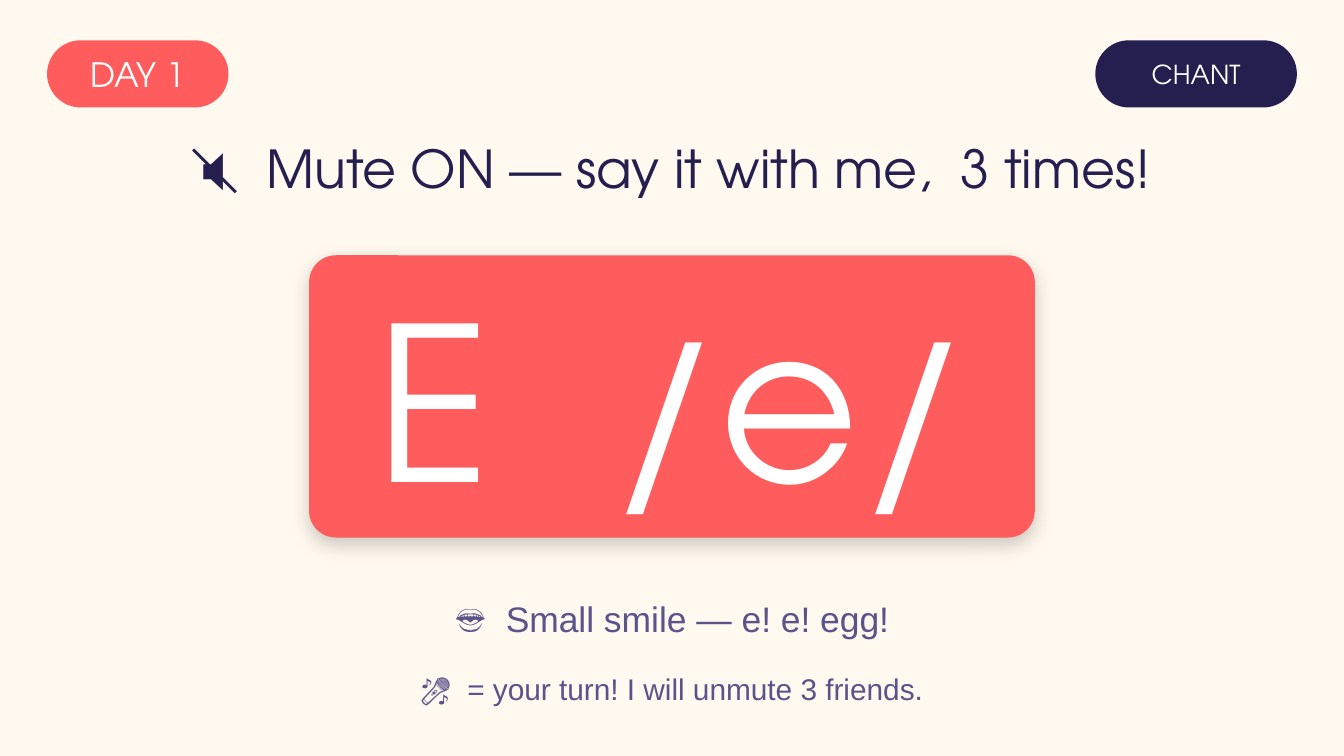
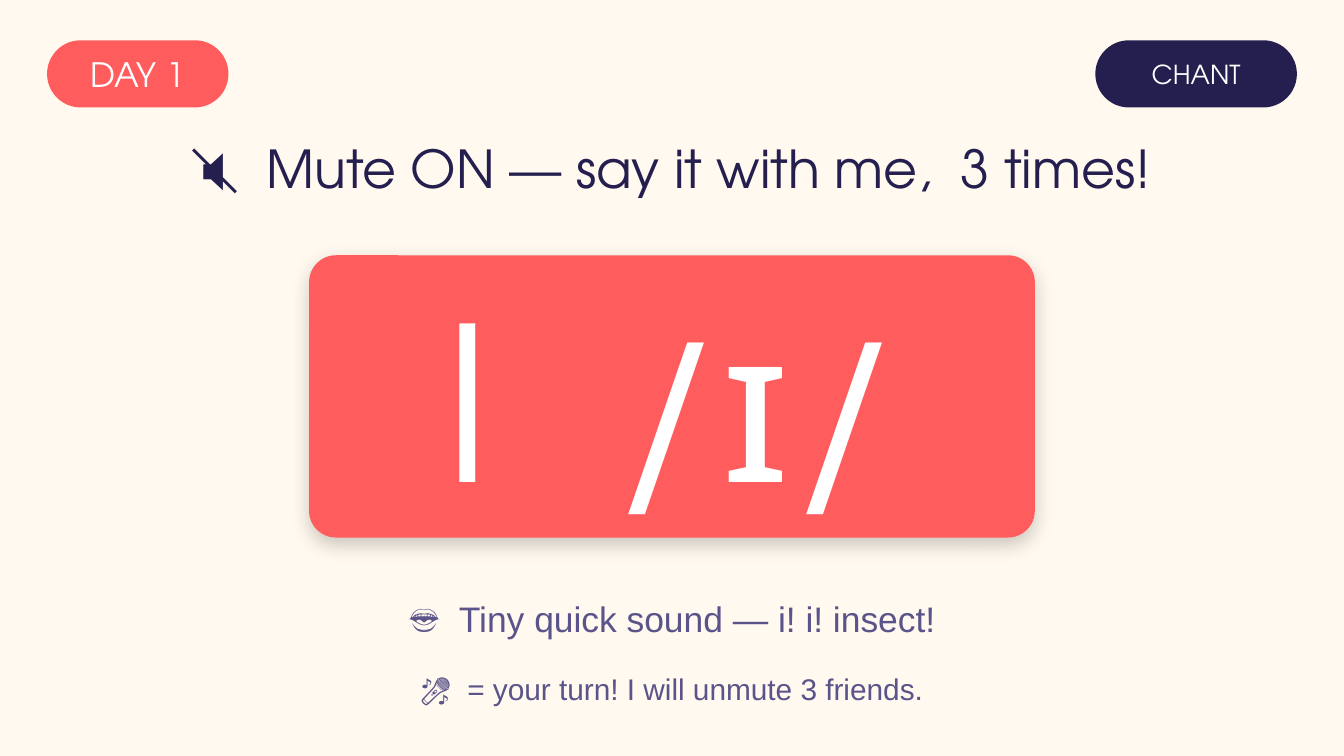
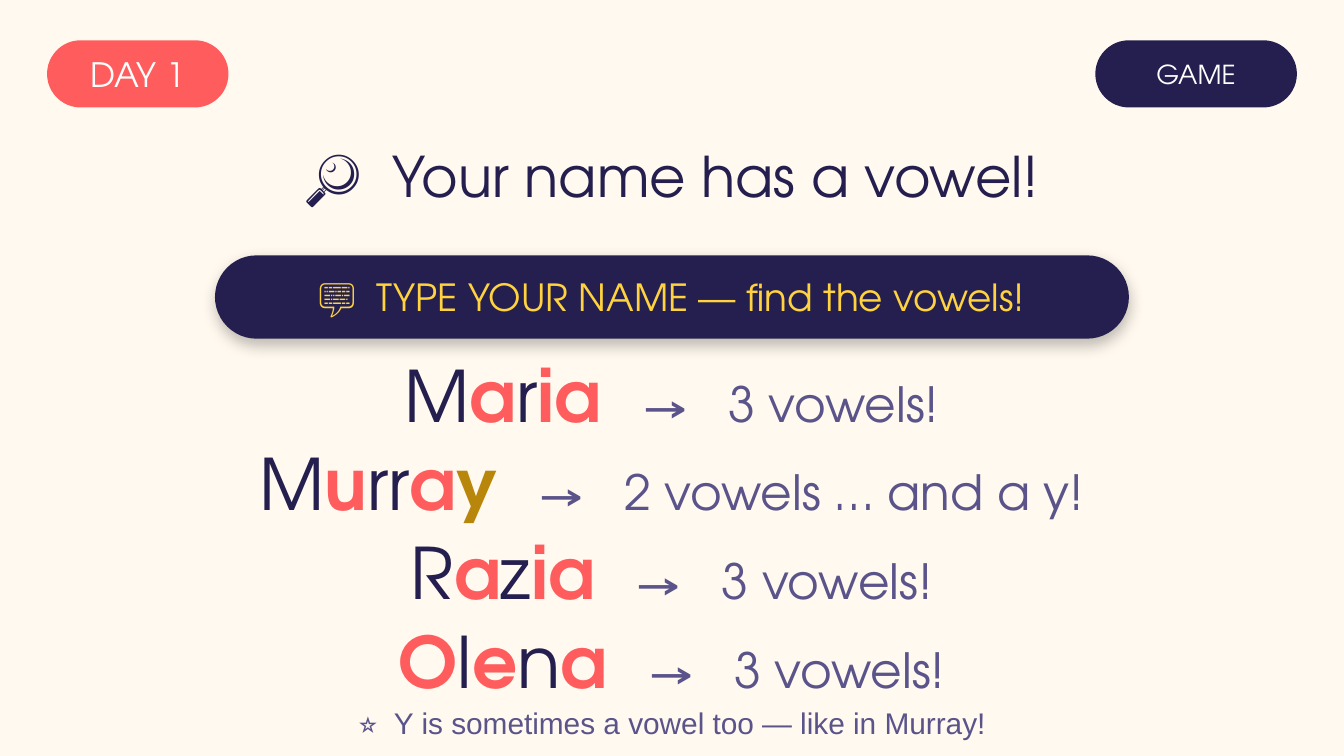
import itertools
from dataclasses import dataclass

import pptx
import pptx.dml.color
import pptx.enum.shapes
import pptx.enum.text
import pptx.oxml
import pptx.oxml.ns
import pptx.util

Inches = pptx.util.Inches
Pt = pptx.util.Pt


@dataclass(frozen=True)
class Theme:
    cream: str = "FFF9EF"
    coral: str = "FF5D5D"
    navy: str = "241F4E"
    violet: str = "5A548A"
    yellow: str = "FFD23F"
    gold: str = "B8860B"
    white: str = "FFFFFF"
    display: str = "TeX Gyre Adventor"
    plain: str = "Arial"
    day_size: int = 18
    activity_size: int = 14
    chant_title_size: int = 28
    game_title_size: int = 30
    sound_size: int = 115
    tip_size: int = 19
    note_size: int = 16
    prompt_size: int = 20
    name_size: int = 38
    count_size: int = 26


THEME = Theme()
SLIDE_WIDTH = 10
SLIDE_HEIGHT = SLIDE_WIDTH * 9 / 16
DAY = "DAY 1"

CHANT_TITLE = "🔇  Mute ON — say it with me,  3 times!"
CHANT_TURN = "🎤  = your turn! I will unmute 3 friends."
CHANTS = [
    ("E  /e/", "👄  Small smile — e! e! egg!"),
    ("I  /ɪ/", "👄  Tiny quick sound — i! i! insect!"),
]

GAME_TITLE = "🔎  Your name has a vowel!"
GAME_PROMPT = "💬  TYPE YOUR NAME — find the vowels!"
GAME_NAMES = [
    ("Maria", "3 vowels!"),
    ("Murray", "2 vowels … and a y!"),
    ("Razia", "3 vowels!"),
    ("Olena", "3 vowels!"),
]
GAME_NOTE = "⭐  Y is sometimes a vowel too — like in Murray!"
NAMES_TOP, NAME_HEIGHT, NAME_STEP = 2.62, 0.62, 0.66


def rgb(color):
    return pptx.dml.color.RGBColor.from_string(color)


def write(shape, runs):
    """Fill a shape with one centred line of (text, size, color, font, bold) runs."""
    frame = shape.text_frame
    frame.word_wrap = True
    frame.auto_size = pptx.enum.text.MSO_AUTO_SIZE.NONE
    frame.vertical_anchor = pptx.enum.text.MSO_ANCHOR.MIDDLE
    line = frame.paragraphs[0]
    line.alignment = pptx.enum.text.PP_ALIGN.CENTER
    for text, size, color, font, bold in runs:
        run = line.add_run()
        run.text = text
        run.font.size = Pt(size)
        run.font.color.rgb = rgb(color)
        run.font.name = font
        run.font.bold = bold


def add_line(slide, top, height, runs):
    """Add a line of text centred across the whole slide."""
    box = slide.shapes.add_textbox(0, Inches(top), Inches(SLIDE_WIDTH), Inches(height))
    write(box, runs)


def add_caption(slide, top, height, text, size):
    add_line(slide, top, height, [(text, size, THEME.violet, THEME.plain, False)])


def add_panel(slide, box, fill, text, size, color=THEME.white, corner=0.5, shadow=None):
    """Add a rounded panel; shadow is (opacity %, blur pt, distance pt)."""
    panel = slide.shapes.add_shape(
        pptx.enum.shapes.MSO_SHAPE.ROUNDED_RECTANGLE, *map(Inches, box))
    panel.adjustments[0] = corner
    panel.fill.solid()
    panel.fill.fore_color.rgb = rgb(fill)
    panel.line.fill.background()
    panel.shadow.inherit = False
    if shadow:
        add_shadow(panel, *shadow)
    frame = panel.text_frame
    frame.margin_left = frame.margin_top = frame.margin_right = frame.margin_bottom = 0
    write(panel, [(text, size, color, THEME.display, False)])


def add_shadow(panel, opacity, blur, distance):
    effects = panel._element.spPr.find(pptx.oxml.ns.qn("a:effectLst"))
    effects.append(pptx.oxml.parse_xml(
        f'<a:outerShdw {pptx.oxml.ns.nsdecls("a")} blurRad="{Pt(blur)}" '
        f'dist="{Pt(distance)}" dir="5400000" algn="ctr" rotWithShape="0">'
        f'<a:srgbClr val="000000"><a:alpha val="{opacity * 1000}"/></a:srgbClr>'
        '</a:outerShdw>'))


def add_day_slide(deck, activity, title, title_size, title_height):
    """Add a slide with the title and the two pills that every slide carries."""
    slide = deck.slides.add_slide(deck.slide_layouts.get_by_name("Title Only"))
    heading = slide.shapes.title
    heading.left, heading.top = 0, Inches(0.95)
    heading.width, heading.height = Inches(SLIDE_WIDTH), Inches(title_height)
    write(heading, [(title, title_size, THEME.navy, THEME.display, False)])
    add_panel(slide, (0.35, 0.3, 1.35, 0.5), THEME.coral, DAY, THEME.day_size)
    add_panel(slide, (8.15, 0.3, 1.5, 0.5), THEME.navy, activity, THEME.activity_size)
    return slide


def add_chant(deck, sound, tip):
    slide = add_day_slide(deck, "CHANT", CHANT_TITLE, THEME.chant_title_size, 0.6)
    add_panel(slide, (2.3, 1.9, 5.4, 2.1), THEME.coral, sound, THEME.sound_size,
              corner=0.095, shadow=(20, 10, 4))
    add_caption(slide, 4.35, 0.5, tip, THEME.tip_size)
    add_caption(slide, 4.9, 0.45, CHANT_TURN, THEME.note_size)


def letter_color(letter):
    if letter.lower() in "aeiou":
        return THEME.coral
    return THEME.gold if letter == "y" else THEME.navy


def name_runs(name, count):
    """Split a name into consonants and bold vowels, then add its vowel count."""
    runs = [("".join(letters), THEME.name_size, color, THEME.display, color != THEME.navy)
            for color, letters in itertools.groupby(name, letter_color)]
    return runs + [(f"   →   {count}", THEME.count_size, THEME.violet, THEME.display, False)]


def add_game(deck):
    slide = add_day_slide(deck, "GAME", GAME_TITLE, THEME.game_title_size, 0.7)
    add_panel(slide, (1.6, 1.9, 6.8, 0.62), THEME.navy, GAME_PROMPT, THEME.prompt_size,
              color=THEME.yellow, shadow=(25, 8, 3))
    for row, (name, count) in enumerate(GAME_NAMES):
        add_line(slide, NAMES_TOP + row * NAME_STEP, NAME_HEIGHT, name_runs(name, count))
    add_caption(slide, 5.18, 0.4, GAME_NOTE, THEME.note_size)


def main():
    deck = pptx.Presentation()
    deck.slide_width, deck.slide_height = Inches(SLIDE_WIDTH), Inches(SLIDE_HEIGHT)
    backdrop = deck.slide_master.background.fill
    backdrop.solid()
    backdrop.fore_color.rgb = rgb(THEME.cream)
    for sound, tip in CHANTS:
        add_chant(deck, sound, tip)
    add_game(deck)
    deck.save("out.pptx")


if __name__ == "__main__":
    main()
